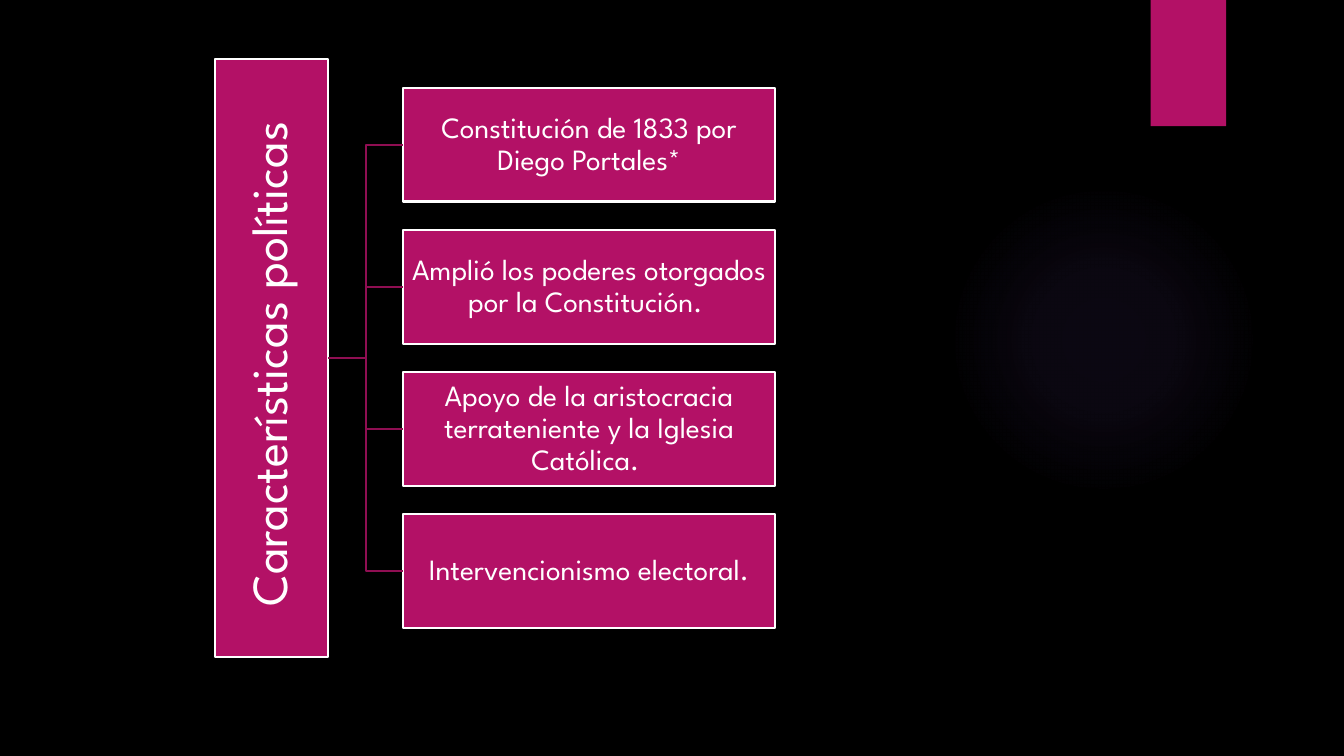
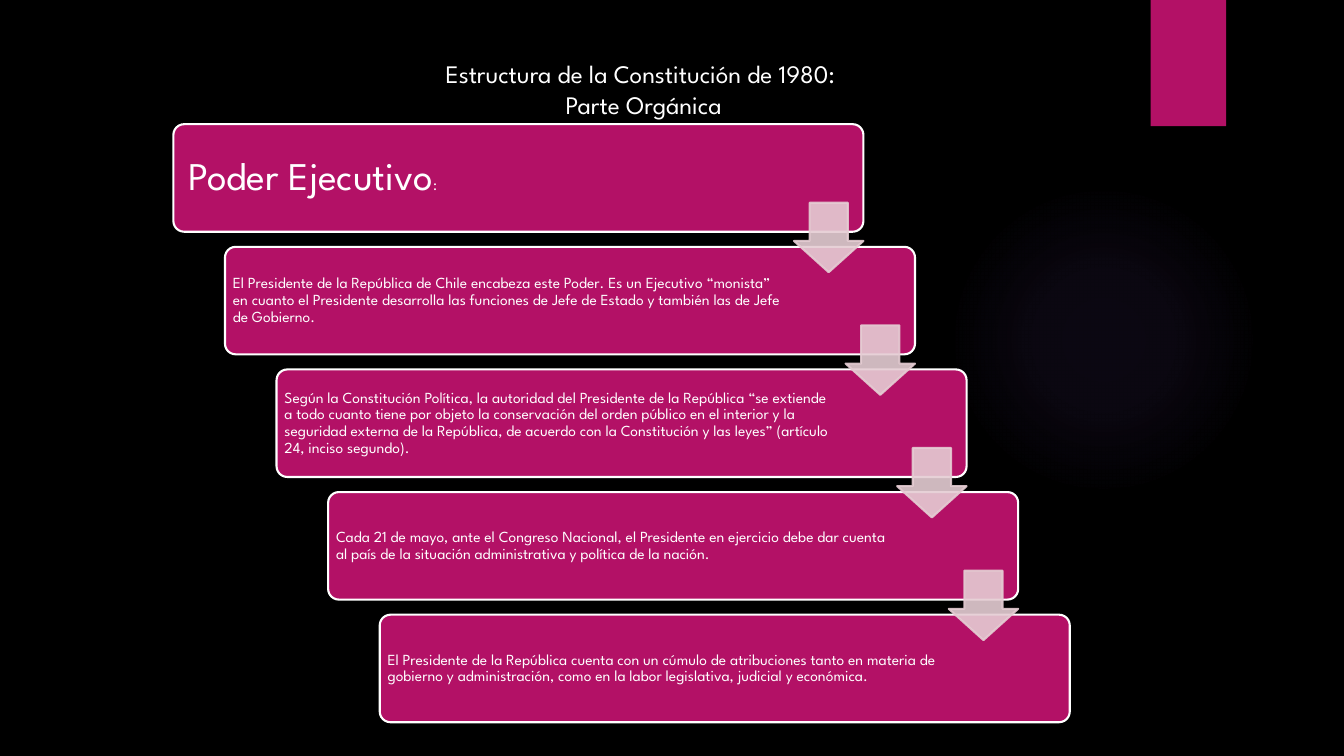
from dataclasses import dataclass
from typing import Any

from lxml.etree import SubElement
from pptx import Presentation
from pptx.dml.color import RGBColor
from pptx.enum.shapes import MSO_CONNECTOR as CONN, MSO_SHAPE as SHAPE
from pptx.enum.text import MSO_ANCHOR as ANCHOR, MSO_AUTO_SIZE as AUTO, PP_ALIGN as ALIGN
from pptx.oxml import parse_xml
from pptx.oxml.ns import nsdecls, qn
from pptx.util import Cm, Pt

FONT = "League Spartan"
BLACK, WHITE, MAGENTA = "000000", "FFFFFF", "B31166"
WINE, PINK, VIOLET = "8F0E52", "E5CCD3", "9B6BF2"
LINE_PT = 1.5
TITLE_ONLY = 5

Run = tuple[str, float]


@dataclass(frozen=True)
class Area:
    """A rectangle in centimetres."""
    left: float
    top: float
    width: float
    height: float

    def lengths(self) -> tuple:
        return Cm(self.left), Cm(self.top), Cm(self.width), Cm(self.height)

    def turned(self) -> "Area":
        """The area with width and height swapped around the same centre."""
        shift = (self.width - self.height) / 2
        return Area(self.left + shift, self.top - shift, self.height, self.width)


@dataclass(frozen=True)
class TextFormat:
    """Paragraph layout; insets are left, top, right, bottom in centimetres."""
    align: ALIGN = ALIGN.CENTER
    anchor: ANCHOR = ANCHOR.MIDDLE
    spacing: float = 0.9
    insets: tuple[float, float, float, float] = (0.03, 0.03, 0.03, 0.03)


@dataclass(frozen=True)
class Step:
    runs: list[Run]
    left_inset: float = 0.12


GLOW = Area(23.9, 4.65, 7.82, 7.82)
TAB = Area(29, 0, 1.9, 3.18)

POLITICS_PANEL = Area(5.41, 1.49, 2.86, 15.06)
TRAIT = Area(10.16, 2.22, 9.37, 2.86)
TRAIT_PITCH = 3.58
TRAITS = [
    "Constitución de 1833 por Diego Portales*",
    "Amplió los poderes otorgados por la Constitución. ",
    "Apoyo de la aristocracia terrateniente y la Iglesia Católica. ",
    "Intervencionismo electoral.",
]

STRUCTURE_TITLE = Area(7.75, 1.35, 16.94, 1.8)
STEP = Area(4.37, 3.13, 17.39, 2.71)
STEP_DX, STEP_DY = 1.3, 3.09
ARROW_SIZE, ARROW_DROP = 1.75, 1.98
STEPS = [
    Step([("Poder Ejecutivo", 28), (":", 11)], left_inset=0.3),
    Step([("El Presidente de la República de Chile encabeza este Poder. Es un Ejecutivo "
           "“monista” en cuanto el Presidente desarrolla las funciones de Jefe de Estado "
           "y también las de Jefe de Gobierno.", 11)]),
    Step([("Según la Constitución Política, la autoridad del Presidente de la República "
           "“se extiende a todo cuanto tiene por objeto la conservación del orden público "
           "en el interior y la seguridad externa de la República, de acuerdo con la "
           "Constitución y las leyes” (artículo 24, inciso segundo).", 11)]),
    Step([("Cada 21 de mayo, ante el Congreso Nacional, el Presidente en ejercicio debe "
           "dar cuenta al país de la situación administrativa y política de la nación.", 11)]),
    Step([("El Presidente de la República cuenta con un cúmulo de atribuciones tanto en "
           "materia de gobierno y administración, como en la labor legislativa, judicial "
           "y económica.", 11)]),
]


def rgb(color: str) -> RGBColor:
    return RGBColor.from_string(color)


def apply(target: Any, values: dict[str, Any]) -> None:
    for name, value in values.items():
        setattr(target, name, value)


def paint(sp: Any, fill: str, line: str | None = None) -> None:
    sp.shadow.inherit = False
    sp.fill.solid()
    sp.fill.fore_color.rgb = rgb(fill)
    if line is None:
        sp.line.fill.background()
    else:
        sp.line.color.rgb = rgb(line)
        sp.line.width = Pt(LINE_PT)


def write(sp: Any, paragraphs: list[list[Run]], fmt: TextFormat) -> None:
    tf = sp.text_frame
    left, top, right, bottom = map(Cm, fmt.insets)
    apply(tf, {"word_wrap": True, "auto_size": AUTO.NONE, "vertical_anchor": fmt.anchor,
               "margin_left": left, "margin_top": top,
               "margin_right": right, "margin_bottom": bottom})
    for i, runs in enumerate(paragraphs):
        p = tf.add_paragraph() if i else tf.paragraphs[0]
        apply(p, {"alignment": fmt.align, "line_spacing": fmt.spacing,
                  "space_before": Pt(0), "space_after": Pt(0)})
        for text, size in runs:
            r = p.add_run()
            r.text = text
            apply(r.font, {"name": FONT, "size": Pt(size), "bold": False})
            r.font.color.rgb = rgb(WHITE)


def place_title(slide: Any, area: Area) -> Any:
    title = slide.shapes.title
    apply(title, dict(zip(("left", "top", "width", "height"), area.lengths())))
    return title


def decorate_master(prs: Any, slide: Any) -> None:
    """Give the master its background, glow and tab; shapes are made on the slide, then moved."""
    master = prs.slide_master
    master.background.fill.solid()
    master.background.fill.fore_color.rgb = rgb(BLACK)

    glow = slide.shapes.add_shape(SHAPE.OVAL, *GLOW.lengths())
    glow.shadow.inherit = False
    glow.line.fill.background()
    stops = "".join(
        f'<a:gs pos="{pos * 1000}"><a:srgbClr val="{VIOLET}">'
        f'<a:alpha val="{alpha * 1000}"/></a:srgbClr></a:gs>'
        for pos, alpha in ((0, 7), (36, 6), (69, 0)))
    glow.element.spPr.insert(2, parse_xml(
        f'<a:gradFill {nsdecls("a")} rotWithShape="1"><a:gsLst>{stops}</a:gsLst>'
        '<a:path path="circle"><a:fillToRect l="50000" t="50000" r="50000" b="50000"/>'
        '</a:path></a:gradFill>'))

    tab = slide.shapes.add_shape(SHAPE.RECTANGLE, *TAB.lengths())
    paint(tab, MAGENTA)
    for i, sp in enumerate((glow, tab)):
        sp.element.nvSpPr.cNvPr.set("id", str(101 + i))
        master.shapes.element.append(sp.element)


def join(slide: Any, start: Any, end: Any) -> None:
    """Link the right side of start to the left side of end with an elbow."""
    link = slide.shapes.add_connector(CONN.ELBOW, 0, 0, 0, 0)
    link.begin_connect(start, 3)
    link.end_connect(end, 1)
    link.line.color.rgb = rgb(WINE)
    link.line.width = Pt(LINE_PT)
    SubElement(link.element.spPr, qn("a:effectLst"))


def build_politics(slide: Any) -> None:
    panel = slide.shapes.add_shape(SHAPE.RECTANGLE, *POLITICS_PANEL.lengths())
    paint(panel, MAGENTA, WHITE)

    for i, text in enumerate(TRAITS):
        area = Area(TRAIT.left, TRAIT.top + i * TRAIT_PITCH, TRAIT.width, TRAIT.height)
        box = slide.shapes.add_shape(SHAPE.RECTANGLE, *area.lengths())
        paint(box, MAGENTA, WHITE)
        write(box, [[(text, 21)]], TextFormat())
        join(slide, panel, box)

    title = place_title(slide, POLITICS_PANEL.turned())
    title.rotation = 270
    write(title, [[("Características políticas ", 36)]], TextFormat())
    slide.shapes.element.append(title.element)  # in front of the panel


def add_arrow(slide: Any, box: Area) -> None:
    area = Area(box.left + box.width - ARROW_SIZE, box.top + ARROW_DROP,
                ARROW_SIZE, ARROW_SIZE)
    arrow = slide.shapes.add_shape(SHAPE.DOWN_ARROW, *area.lengths())
    arrow.adjustments[0], arrow.adjustments[1] = 0.55, 0.45
    paint(arrow, PINK, PINK)
    for color in arrow.element.spPr.iter(qn("a:srgbClr")):
        SubElement(color, qn("a:alpha")).set("val", "90000")


def build_structure(slide: Any) -> None:
    title = place_title(slide, STRUCTURE_TITLE)
    write(title, [[("Estructura de la Constitución de 1980: ", 18)], [("Parte Orgánica", 18)]],
          TextFormat(anchor=ANCHOR.TOP, spacing=1.0, insets=(0.25, 0.13, 0.25, 0.13)))

    areas = [Area(STEP.left + i * STEP_DX, STEP.top + i * STEP_DY, STEP.width, STEP.height)
             for i in range(len(STEPS))]
    for area, step in zip(areas, STEPS):
        box = slide.shapes.add_shape(SHAPE.ROUNDED_RECTANGLE, *area.lengths())
        box.adjustments[0] = 0.1
        paint(box, MAGENTA, WHITE)
        write(box, [step.runs],
              TextFormat(align=ALIGN.LEFT, insets=(step.left_inset, 0.2, 3.13, 0.2)))
    for area in areas[:-1]:
        add_arrow(slide, area)


def main() -> None:
    prs = Presentation()
    prs.slide_width, prs.slide_height = Cm(33.87), Cm(19.05)
    layout = prs.slide_layouts[TITLE_ONLY]
    politics, structure = (prs.slides.add_slide(layout) for _ in range(2))
    decorate_master(prs, politics)
    build_politics(politics)
    build_structure(structure)
    prs.save("out.pptx")


if __name__ == "__main__":
    main()
